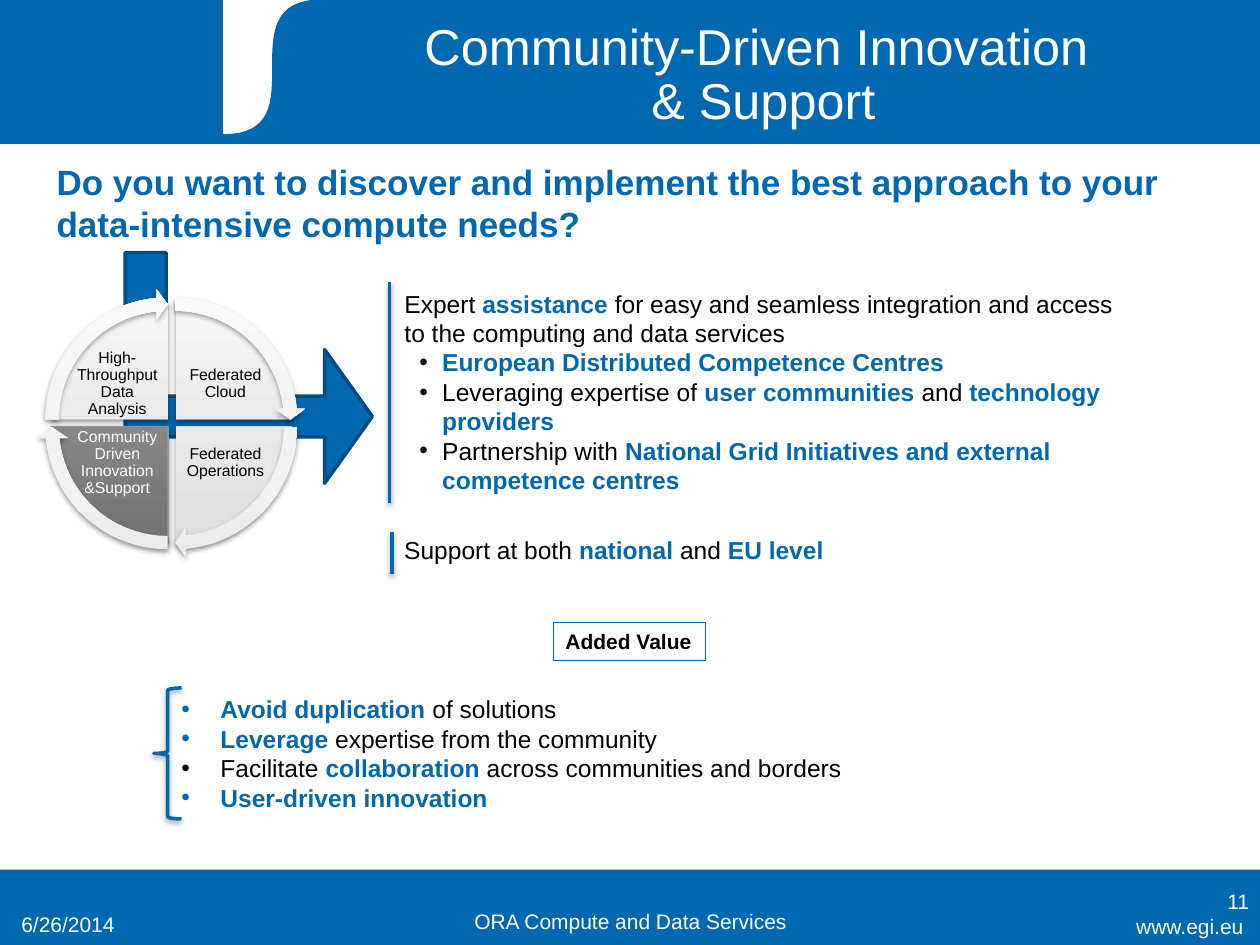
from pptx import Presentation
from pptx.dml.color import RGBColor
from pptx.enum import shapes as es, text as et
from pptx.oxml import parse_xml
from pptx.oxml.ns import nsdecls, qn
from pptx.util import Cm, Pt

HUES = {
    "blue": "0067B1", "navy": "004C83", "white": "FFFFFF", "black": "000000",
    "gray": "969696",
}
PALE = ((0, "DDDDDD"), (35, "E7E7E7"), (100, "F6F6F6"))
DARK = ((0, "727272"), (80, "949494"), (100, "959595"))
RING = ((0, "ECECEC"), (35, "F1F1F1"), (100, "F9F9F9"))
KIND = es.MSO_SHAPE
TOP, MID, LOW = et.MSO_ANCHOR.TOP, et.MSO_ANCHOR.MIDDLE, et.MSO_ANCHOR.BOTTOM
LEFT, MIDST, RIGHT = et.PP_ALIGN.LEFT, et.PP_ALIGN.CENTER, et.PP_ALIGN.RIGHT

QUARTERS = (
    ("Federated Cloud", 1, 0, 162, PALE),
    ("Federated Operations", 1, 1, 0, PALE),
    ("Community Driven Innovation &Support", 0, 1, 54, DARK),
    ("High-Throughput Data Analysis", 0, 0, 108, PALE),
)


def hue(name):
    return RGBColor.from_string(HUES[name])


def bullet(par, left, hang, tint):
    props = par._p.get_or_add_pPr()
    props.set("marL", str(Cm(left)))
    props.set("indent", str(-Cm(hang)))
    if not hang:
        props.append(parse_xml(f"<a:buNone {nsdecls('a')}/>"))
        return
    if tint:
        props.append(parse_xml(
            f'<a:buClr {nsdecls("a")}><a:srgbClr val="{HUES[tint]}"/></a:buClr>'))
    props.append(parse_xml(f'<a:buFont {nsdecls("a")} typeface="Arial"/>'))
    props.append(parse_xml(f'<a:buChar {nsdecls("a")} char="•"/>'))


def write(frame, *lines, size=14, color="black", strong="blue", align=LEFT,
          anchor=TOP, inset=None, space=None, wrap=True, hang=(0, 0), tint=None):
    frame.word_wrap = wrap
    frame.auto_size = et.MSO_AUTO_SIZE.NONE
    frame.vertical_anchor = anchor
    if inset is not None:
        frame.margin_left = frame.margin_right = Cm(inset)
        frame.margin_top = frame.margin_bottom = Cm(inset)
    for i, line in enumerate(lines):
        par = frame.add_paragraph() if i else frame.paragraphs[0]
        dot = line.startswith("• ")
        bullet(par, *(hang if dot else (0, 0)), tint)
        par.alignment = align
        par.space_before = Pt(0)
        if space:
            par.line_spacing = space
        for j, part in enumerate(line.removeprefix("• ").split("*")):
            for k, piece in enumerate(part.split("\n")):
                if k:
                    par.add_line_break()
                if piece:
                    run = par.add_run()
                    run.text = piece
                    font = run.font
                    font.name, font.size = "Arial", Pt(size)
                    font.bold = j % 2 == 1
                    font.color.rgb = hue(strong if j % 2 else color)


def label(slide, box, *lines, **style):
    item = slide.shapes.add_textbox(*map(Cm, box))
    write(item.text_frame, *lines, **style)


def holder(item, box, *lines, **style):
    item.left, item.top, item.width, item.height = map(Cm, box)
    tree = item.element.getparent()
    tree.append(item.element)
    write(item.text_frame, *lines, **style)


def paint(item, fill=None, line=None, width=0.75):
    item.shadow.inherit = False
    if fill:
        item.fill.solid()
        item.fill.fore_color.rgb = hue(fill)
    else:
        item.fill.background()
    if line:
        item.line.color.rgb = hue(line)
        item.line.width = Pt(width)
    else:
        item.line.fill.background()


def shape(slide, kind, box, adjust=(), **look):
    item = slide.shapes.add_shape(kind, *map(Cm, box))
    for i, value in enumerate(adjust):
        item.adjustments[i] = value
    paint(item, **look)
    return item


def shade(item):
    props = item.element.spPr
    effect = props.find(qn("a:effectLst"))
    if effect is None:
        effect = parse_xml(f"<a:effectLst {nsdecls('a')}/>")
        props.append(effect)
    effect.append(parse_xml(
        f'<a:outerShdw {nsdecls("a")} blurRad="{Pt(3.1)}" dist="{Pt(1.6)}" '
        f'dir="5400000" rotWithShape="0"><a:srgbClr val="{HUES["black"]}">'
        '<a:alpha val="38000"/></a:srgbClr></a:outerShdw>'))


def blend(item, stops):
    marks = "".join(
        f'<a:gs pos="{at * 1000}"><a:srgbClr val="{tone}"/></a:gs>'
        for at, tone in stops)
    props = item.element.spPr
    props.replace(props.find(qn("a:noFill")), parse_xml(
        f'<a:gradFill {nsdecls("a")} rotWithShape="1"><a:gsLst>{marks}</a:gsLst>'
        '<a:lin ang="16200000" scaled="0"/></a:gradFill>'))


def rule(slide, x, top, end):
    line = slide.shapes.add_connector(
        es.MSO_CONNECTOR.STRAIGHT, Cm(x), Cm(top), Cm(x), Cm(end))
    line.line.color.rgb = hue("blue")
    line.line.width = Pt(2)
    shade(line)


def curve(points, steps=32):
    for i in range(1, steps + 1):
        t = i / steps
        parts = ((1 - t) ** 3, 3 * t * (1 - t) ** 2, 3 * t * t * (1 - t), t ** 3)
        yield tuple(Cm(sum(w * p[axis] for w, p in zip(parts, points)))
                    for axis in (0, 1))


def bands(slide):
    shape(slide, KIND.RECTANGLE, (0, 17.53, 25.4, 1.52), fill="blue")
    shape(slide, KIND.RECTANGLE, (0, 0, 25.4, 2.9), fill="blue", line="blue")
    left, right, low, bend = 4.5, 9.5, 2.72, 6.5
    shape(slide, KIND.RECTANGLE, (left, 0, right - left, low),
          fill="white", line="white")
    swoop = slide.shapes.build_freeform(Cm(right), 0, scale=1.0)
    swoop.add_line_segments(
        [(Cm(right), Cm(low)), (Cm(left), Cm(low)),
         *curve(((left, low), (bend, low), (left, 0), (bend, 0)))], close=True)
    paint(swoop.convert_to_shape(), fill="blue", line="blue")


def wheel(slide):
    for name, col, row, start, stops in QUARTERS:
        dark = stops is DARK
        pie = shape(slide, KIND.PIE,
                    (1.04 + 0.15 * col, 6.1 + 0.15 * row, 4.7, 4.7),
                    (start, (start + 54) % 216), line="gray" if dark else None)
        blend(pie, stops)
        shade(pie)
        label(slide, (1.5 + 2.18 * col, 7.09 + 1.6 * row, 1.73, 1.3), name,
              size=9, color="white" if dark else "black", align=MIDST,
              anchor=MID, inset=0.03, space=0.9)
    for name, col, row, start, stops in QUARTERS:
        arrow = shape(slide, KIND.CIRCULAR_ARROW,
                      (0.74 + 0.15 * col, 5.82 + 0.15 * row, 5.28, 5.28),
                      (0.051, 3.275, start + 50.725, start, 0.059))
        blend(arrow, RING)
        shade(arrow)


def footer(slide):
    look = dict(size=12, color="white")
    label(slide, (21.31, 18.29, 4.01, 0.79), "www.egi.eu", align=RIGHT, **look)
    label(slide, (0.18, 17.98, 5.92, 1.02), "6/26/2014", anchor=LOW, **look)
    label(slide, (8.69, 17.93, 8.05, 1.02), "ORA Compute and Data Services",
          align=MIDST, anchor=LOW, **look)
    label(slide, (19.51, 17.65, 5.92, 1.02), "11", align=RIGHT, anchor=MID, **look)


def main():
    deck = Presentation()
    deck.slide_width, deck.slide_height = Cm(25.4), Cm(19.05)
    slide = deck.slides.add_slide(deck.slide_layouts[3])
    title, offer, value = slide.placeholders
    bands(slide)
    footer(slide)
    holder(title, (5.89, 0.33, 19, 2.41),
           "Community-Driven Innovation \n& Support",
           size=28.8, color="white", align=MIDST, anchor=MID, space=0.9)
    holder(offer, (7.9, 5.69, 14.81, 4.45),
           "Expert *assistance *for easy and seamless integration and access "
           "to the computing and data services",
           "• *European Distributed Competence Centres*",
           "• Leveraging expertise of *user communities *and *technology providers*",
           "• Partnership with *National Grid Initiatives and external "
           "competence centres*",
           hang=(0.76, 0.46), tint="black")
    rule(slide, 7.85, 5.69, 10.13)
    label(slide, (7.9, 10.67, 14.81, 0.86),
          "Support at both *national *and *EU level*")
    rule(slide, 7.9, 10.72, 11.58)
    bent = shape(slide, KIND.BENT_UP_ARROW, (2.69, 4.93, 4.65, 4.98),
                 (0.177, 0.29, 0.207), fill="blue", line="navy", width=2)
    bent.rotation = 90
    wheel(slide)
    label(slide, (0.89, 3.12, 23.39, 1.96),
          "*Do you want to discover and implement the best approach to your "
          "data-intensive compute needs?*", size=20)
    badge = shape(slide, KIND.RECTANGLE, (11.15, 12.55, 3.07, 0.76),
                  fill="white", line="blue", width=0.25)
    write(badge.text_frame, "*Added Value*", size=12, strong="black", wrap=False)
    holder(value, (3.4, 13.87, 15.19, 2.64),
           "• *Avoid duplication *of solutions",
           "• *Leverage *expertise from the community",
           "• Facilitate *collaboration *across communities and borders",
           "• *User-driven innovation*", hang=(0.79, 0.79))
    brace = shape(slide, KIND.LEFT_BRACE, (3.1, 13.87, 0.56, 2.64),
                  line="blue", width=2)
    shade(brace)
    deck.save("out.pptx")


if __name__ == "__main__":
    main()
